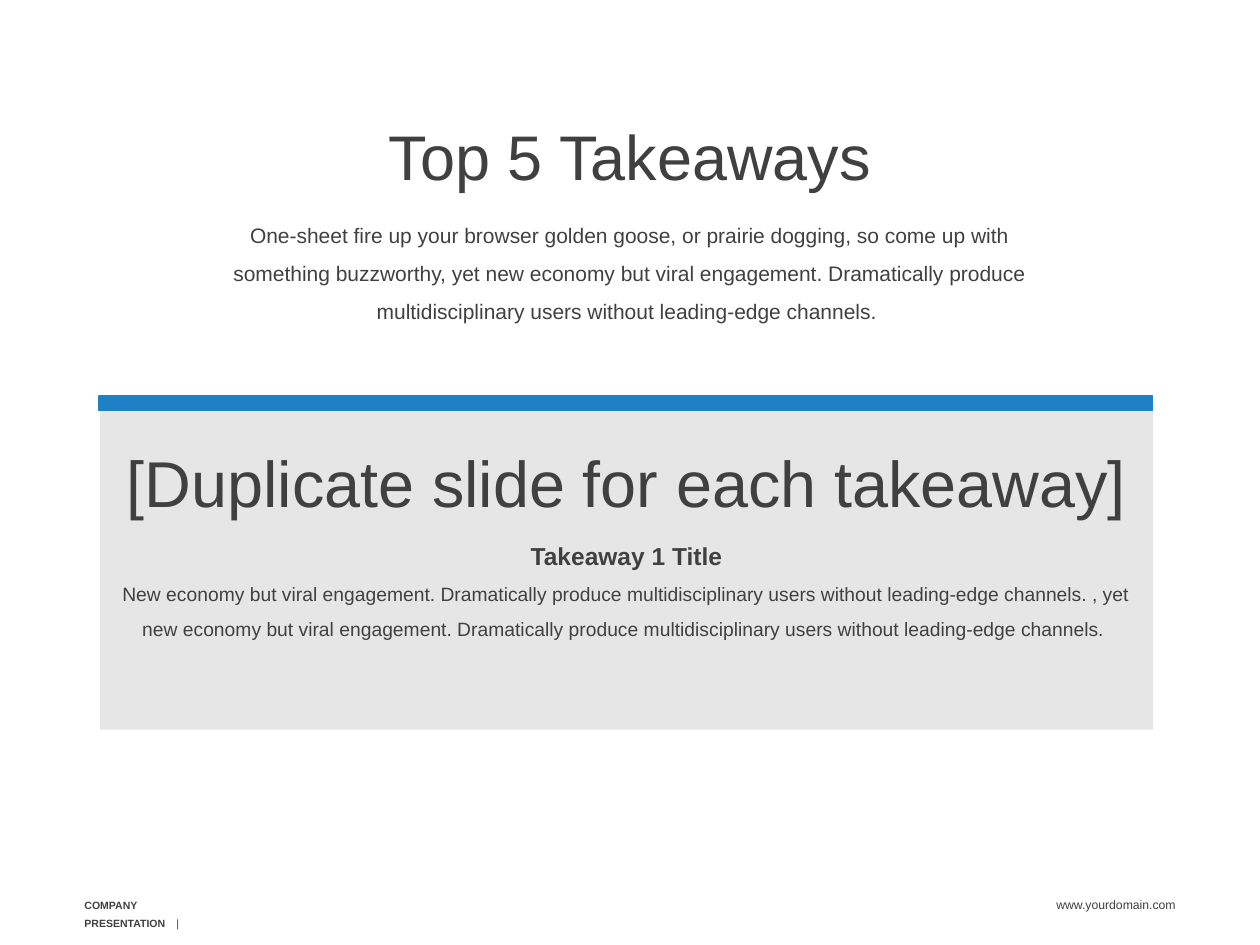
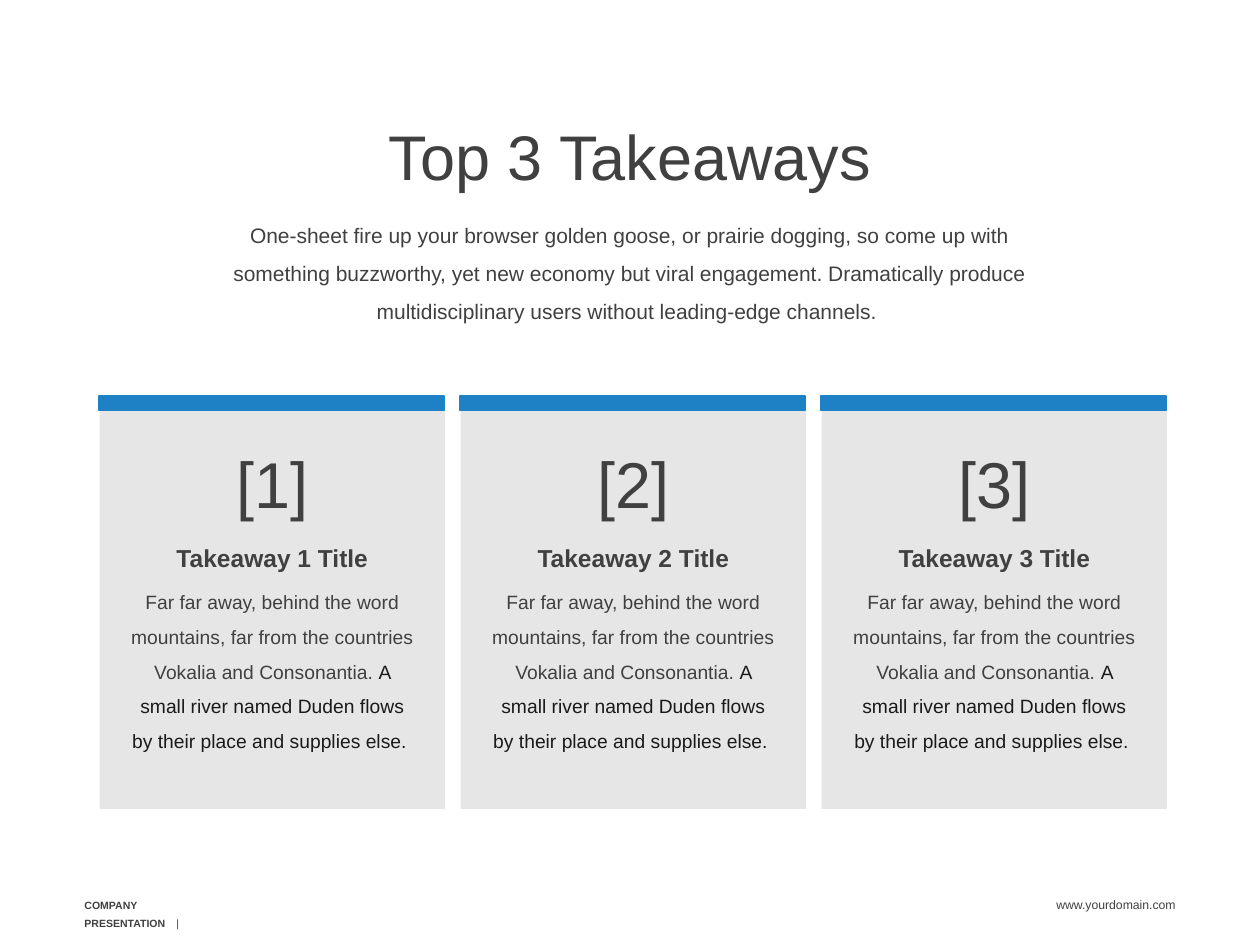
from dataclasses import dataclass

from lxml import etree
from pptx import Presentation
from pptx import util as u
from pptx.dml import color
from pptx.enum import shapes, text
from pptx.oxml import ns


@dataclass(frozen=True)
class Theme:
    font: str = "Arial"
    ink: str = "404040"
    dark: str = "1A1A1A"
    panel: str = "E6E6E6"
    accent: str = "1E80C5"
    title: float = 36
    intro: float = 12
    headline: float = 37
    subtitle: float = 14
    body: float = 11
    footer: float = 6
    domain: float = 7
    inset: float = 2.3


INTRO = (
    "One-sheet fire up your browser golden goose, or prairie dogging, so come up with "
    "something buzzworthy, yet new economy but viral engagement. Dramatically produce "
    "multidisciplinary users without leading-edge channels. "
)
SUMMARY = (
    "New economy but viral engagement. Dramatically produce multidisciplinary users "
    "without leading-edge channels. , yet new economy but viral engagement. "
    "Dramatically produce multidisciplinary users without leading-edge channels. "
)
STORY = "Far far away, behind the word mountains, far from the countries Vokalia and Consonantia. "
STORY_END = "A small river named Duden flows by their place and supplies else. "

PANEL_LEFT = 57
CARD_WIDTH = 197.3
CARD_PITCH = 206.3
ALIGN = text.PP_ALIGN


class Builder:
    def __init__(self, deck, theme):
        self.deck = deck
        self.theme = theme
        self.page = None

    def rect(self, left, top, width, height, fill, outlined=False):
        box = self.page.shapes.add_shape(
            shapes.MSO_SHAPE.RECTANGLE, *map(u.Pt, (left, top, width, height)))
        box.shadow.inherit = False
        box.fill.solid()
        box.fill.fore_color.rgb = color.RGBColor.from_string(fill)
        if outlined:
            box.line.color.rgb = color.RGBColor.from_string(fill)
            box.line.width = u.Pt(1)
        else:
            box.line.fill.background()

    def text(self, left, top, width, height, paras, anchor=text.MSO_ANCHOR.TOP):
        box = self.page.shapes.add_textbox(*map(u.Pt, (left, top, width, height)))
        frame = box.text_frame
        settings = {f"margin_{side}": u.Pt(self.theme.inset)
                    for side in ("left", "top", "right", "bottom")}
        settings |= {"word_wrap": True, "vertical_anchor": anchor,
                     "auto_size": text.MSO_AUTO_SIZE.SHAPE_TO_FIT_TEXT}
        for name, value in settings.items():
            setattr(frame, name, value)
        for index, (spans, layout) in enumerate(paras):
            para = frame.add_paragraph() if index else frame.paragraphs[0]
            for name, value in ({"alignment": ALIGN.CENTER} | layout).items():
                setattr(para, name, value)
            for words, size, look in spans:
                self.span(para, words, size, **look)
        return frame

    def span(self, para, words, size, bold=False, ink=None):
        span = para.add_run()
        span.text = words
        for name, value in {"name": self.theme.font, "size": u.Pt(size), "bold": bold}.items():
            setattr(span.font, name, value)
        span.font.color.rgb = color.RGBColor.from_string(ink or self.theme.ink)

    def tab_stop(self, para, position):
        props = para._p.get_or_add_pPr()
        tabs = etree.SubElement(props, ns.qn("a:tabLst"))
        etree.SubElement(tabs, ns.qn("a:tab"), pos=str(u.Pt(position)), algn="l")

    def footer(self):
        theme = self.theme
        label = self.text(46, 507.6, 76.3, 18.7, [(
            [("COMPANY PRESENTATION\t", theme.footer, {"bold": True}), ("|", theme.footer, {})],
            {"alignment": ALIGN.LEFT, "line_spacing": 1.5})])
        self.tab_stop(label.paragraphs[0], 52.5)
        self.text(545.8, 506.2, 128.2, 10.8, [(
            [("www.yourdomain.com", theme.domain, {})],
            {"alignment": ALIGN.RIGHT, "line_spacing": 1.5})])

    def new_page(self, title):
        self.page = self.deck.slides.add_slide(self.deck.slide_layouts[6])
        self.footer()
        self.text(95, 66.2, 530, 45.4, [(
            [(title, self.theme.title, {})], {"line_spacing": u.Pt(42)})])
        self.text(113, 123.1, 494, 59, [(
            [(INTRO, self.theme.intro, {})], {"line_spacing": 1.5})],
            text.MSO_ANCHOR.MIDDLE)

    def panel(self, left, top, width, height, headline, subtitle, body, body_inset, gap=0):
        theme = self.theme
        self.rect(left, top, width, height, theme.panel)
        headline_top = top + 29.9
        self.text(left + 4, headline_top, width - 8, 36.7, [(
            [(headline, theme.headline, {})], {"line_spacing": u.Pt(31)})])
        spans = [(words, theme.body, {"ink": ink}) for words, ink in body]
        self.text(left + body_inset, headline_top + 43.2, width - 2 * body_inset, 79.2, [
            ([(subtitle, theme.subtitle, {"bold": True})], {}),
            (spans, {"line_spacing": 1.5, "space_before": u.Pt(gap)}),
        ])
        self.rect(left - 0.4, 226.4, width, 8.2, theme.accent, outlined=True)


def main():
    deck = Presentation()
    deck.slide_width, deck.slide_height = u.Pt(720), u.Pt(540)
    theme = Theme()
    builder = Builder(deck, theme)

    builder.new_page("Top 5 Takeaways")
    builder.panel(PANEL_LEFT, 234, 602, 183, "[Duplicate slide for each takeaway]",
                  "Takeaway 1 Title", [(SUMMARY, theme.ink)], body_inset=10)

    builder.new_page("Top 3 Takeaways")
    for index in range(3):
        number = index + 1
        builder.panel(PANEL_LEFT + index * CARD_PITCH, 234.7, CARD_WIDTH, 227.5,
                      f"[{number}]", f"Takeaway {number} Title",
                      [(STORY, theme.ink), (STORY_END, theme.dark)], body_inset=15.2, gap=4)

    deck.save("out.pptx")


if __name__ == "__main__":
    main()
